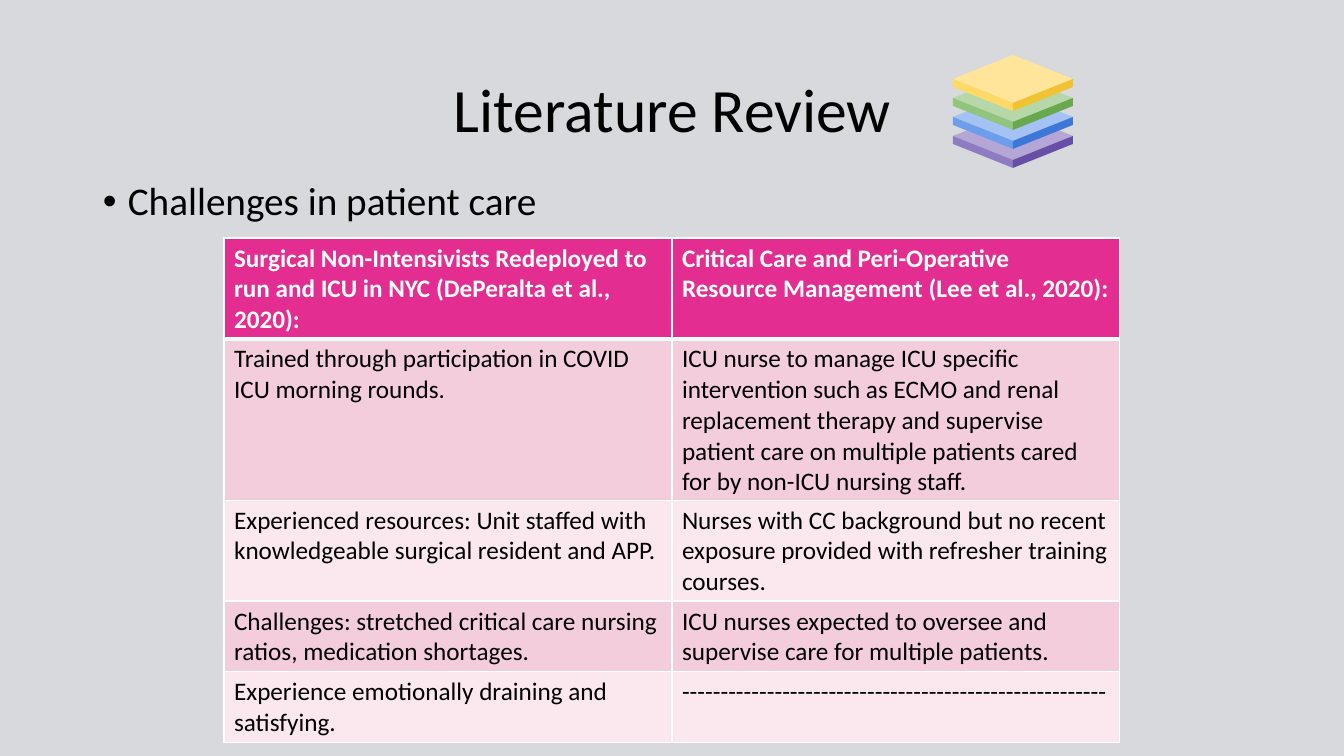
from lxml.etree import SubElement
from pptx import Presentation
from pptx.dml.color import RGBColor
from pptx.enum.text import MSO_ANCHOR as Anchor, PP_ALIGN as Align
from pptx.oxml.ns import qn
from pptx.util import Emu, Pt

EMU_PER_PX = 914400 / 100.8
FONT = "Calibri"
BLACK, WHITE = "000000", "FFFFFF"
HEADER_FILL = "E32D91"
BAND_FILLS = ["FAE8EE", "F4CDDC"]

FINDINGS = [
    ("Surgical Non-Intensivists Redeployed to run and ICU in NYC (DePeralta et al., 2020):",
     "Critical Care and Peri-Operative Resource Management (Lee et al., 2020):"),
    ("Trained through participation in COVID ICU morning rounds.",
     "ICU nurse to manage ICU specific intervention such as ECMO and renal replacement "
     "therapy and supervise patient care on multiple patients cared for by non-ICU nursing staff."),
    ("Experienced resources: Unit staffed with knowledgeable surgical resident and APP.",
     "Nurses with CC background but no recent exposure provided with refresher training courses."),
    ("Challenges: stretched critical care nursing ratios, medication shortages.",
     "ICU nurses expected to oversee and supervise care for multiple patients."),
    ("Experience emotionally draining and satisfying.", "-" * 55),
]

# Top, left and right face of each layer, from the bottom up
LAYERS = [
    ("B4A7D6", "8E7CC3", "674EA7"),
    ("A4C2F4", "6D9EEB", "3C78D8"),
    ("B6D7A8", "93C47D", "6AA84F"),
    ("FFE599", "FFD966", "F1C232"),
]


def px(length):
    return Emu(round(length * EMU_PER_PX))


def paint(fill, color):
    fill.solid()
    fill.fore_color.rgb = RGBColor.from_string(color)


def style_text(para, size, color, bold=False):
    for span in para.runs:
        span.font.name = FONT
        span.font.size = Pt(size)
        span.font.bold = bold
        span.font.color.rgb = RGBColor.from_string(color)


def add_text(page, text, left, top, width, height, size, anchor):
    box = page.shapes.add_textbox(px(left), px(top), px(width), px(height))
    frame = box.text_frame
    frame.word_wrap = True
    frame.vertical_anchor = anchor
    frame.text = text
    para = frame.paragraphs[0]
    para.line_spacing = 0.9
    style_text(para, size, BLACK)
    return para


def add_bullet(para, indent):
    props = para._p.get_or_add_pPr()
    props.set("marL", str(px(indent)))
    props.set("indent", str(-px(indent)))
    SubElement(props, qn("a:buFont")).set("typeface", "Arial")
    SubElement(props, qn("a:buChar")).set("char", "•")


def add_border(cell, side, width):
    line = SubElement(cell._tc.get_or_add_tcPr(), qn(f"a:ln{side}"), w=str(Pt(width)))
    fill = SubElement(line, qn("a:solidFill"))
    SubElement(fill, qn("a:srgbClr"), val=WHITE)


def add_findings_table(page, left, top, column_width, row_height):
    rows, columns = len(FINDINGS), len(FINDINGS[0])
    table = page.shapes.add_table(rows, columns, px(left), px(top),
                                  px(column_width * columns), px(row_height * rows)).table
    table.first_row = table.horz_banding = False
    for r, texts in enumerate(FINDINGS):
        header = r == 0
        for c, text in enumerate(texts):
            cell = table.cell(r, c)
            cell.text = text
            style_text(cell.text_frame.paragraphs[0], 18, WHITE if header else BLACK, header)
            # A thick rule parts the header from the first row
            for side in "LRTB":
                thick = (r, side) in [(0, "B"), (1, "T")]
                add_border(cell, side, 3 if thick else 1)
            paint(cell.fill, HEADER_FILL if header else BAND_FILLS[r % 2])


def add_face(page, points, color):
    corners = [(px(x), px(y)) for x, y in points]
    builder = page.shapes.build_freeform(*corners[0])
    builder.add_line_segments(corners[1:], close=True)
    face = builder.convert_to_shape()
    face.shadow.inherit = False
    face.line.fill.background()
    paint(face.fill, color)


def add_layer(page, center, top, colors, half_width=60, half_height=24, depth=8):
    left, right = center - half_width, center + half_width
    middle, bottom = top + half_height, top + 2 * half_height
    top_color, left_color, right_color = colors
    add_face(page, [(center, top), (left, middle), (center, bottom), (right, middle)], top_color)
    for side, color in ((left, left_color), (right, right_color)):
        add_face(page, [(side, middle), (side, middle + depth),
                        (center, bottom + depth), (center, bottom)], color)


def main():
    deck = Presentation()
    deck.slide_width, deck.slide_height = px(1344), px(756)
    page = deck.slides.add_slide(deck.slide_layouts[6])
    paint(page.background.fill, "D8D9DC")

    # Title and topic
    title = add_text(page, "Literature Review", 93, 40, 1159, 146, 44, Anchor.MIDDLE)
    title.alignment = Align.CENTER
    topic = add_text(page, "Challenges in patient care", 93, 177, 1159, 504, 28, Anchor.TOP)
    topic.space_before = Pt(10)
    add_bullet(topic, 25)

    # Comparison of the two studies
    add_findings_table(page, 224, 238, 448, 41)

    # Stack of layers
    for level, colors in enumerate(LAYERS):
        add_layer(page, 1013, 112 - 19 * level, colors)

    deck.save("out.pptx")


if __name__ == "__main__":
    main()
